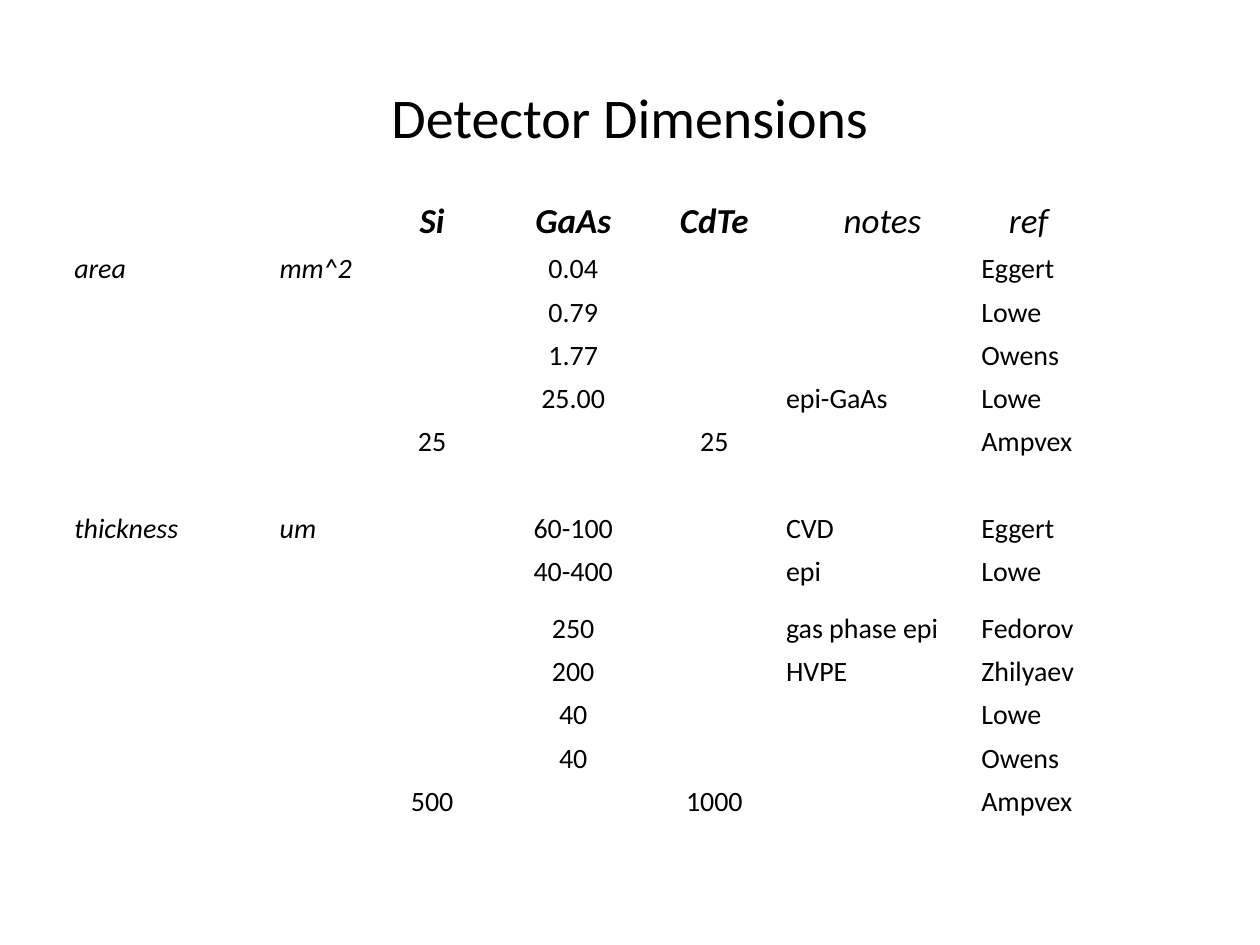
from pptx import Presentation
from pptx.dml.color import RGBColor
from pptx.enum.text import MSO_ANCHOR as Anchor, PP_ALIGN as Align
from pptx.util import Inches, Pt

COLORS = {"text": "000000", "background": "FFFFFF"}
COLUMN_WIDTHS = [1.63, 0.66, 1.12, 1.12, 1.12, 1.55, 0.77, 0.77]
TABLE_HEIGHT, HEADER_HEIGHT, TALL_HEIGHT = 5, 0.43, 0.45
TALL_ROW = 9
LABEL_COLUMNS = (0, 1)
MATERIAL_COLUMNS = (2, 3, 4)

# quantity, unit, Si, GaAs, CdTe, notes, ref
ROWS = [
    ("", "", "Si", "GaAs", "CdTe", "notes", "ref"),
    ("area", "mm^2", "", "0.04", "", "", "Eggert"),
    ("", "", "", "0.79", "", "", "Lowe"),
    ("", "", "", "1.77", "", "", "Owens"),
    ("", "", "", "25.00", "", "epi-GaAs", "Lowe"),
    ("", "", "25", "", "25", "", "Ampvex"),
    ("",) * 7,
    ("thickness", "um", "", "60-100", "", "CVD", "Eggert"),
    ("", "", "", "40-400", "", "epi", "Lowe"),
    ("", "", "", "250", "", "gas phase epi", "Fedorov"),
    ("", "", "", "200", "", "HVPE", "Zhilyaev"),
    ("", "", "", "40", "", "", "Lowe"),
    ("", "", "", "40", "", "", "Owens"),
    ("", "", "500", "", "1000", "", "Ampvex"),
]


def row_heights():
    """Give the header and the tall row their heights; the rest share what is left."""
    plain = (TABLE_HEIGHT - HEADER_HEIGHT - TALL_HEIGHT) / (len(ROWS) - 2)
    special = {0: HEADER_HEIGHT, TALL_ROW: TALL_HEIGHT}
    return [special.get(index, plain) for index in range(len(ROWS))]


class SlideBuilder:
    font = "Calibri"

    def __init__(self, page):
        self.page = page
        page.background.fill.solid()
        page.background.fill.fore_color.rgb = RGBColor.from_string(COLORS["background"])

    def add_text(self, para, text, size, align, bold=False, italic=False):
        para.alignment = align
        span = para.add_run()
        span.text = text
        span.font.name = self.font
        span.font.size = Pt(size)
        span.font.bold = bold
        span.font.italic = italic
        span.font.color.rgb = RGBColor.from_string(COLORS["text"])

    def title(self, text, left, top, width, height):
        box = self.page.shapes.title
        box.left, box.top = Inches(left), Inches(top)
        box.width, box.height = Inches(width), Inches(height)
        box.text_frame.vertical_anchor = Anchor.MIDDLE
        self.add_text(box.text_frame.paragraphs[0], text, 32, Align.CENTER)

    def table(self, left, top):
        frame = self.page.shapes.add_table(
            len(ROWS), len(COLUMN_WIDTHS), Inches(left), Inches(top),
            Inches(sum(COLUMN_WIDTHS)), Inches(TABLE_HEIGHT))
        table = frame.table
        table.first_row = table.horz_banding = False
        for column, width in zip(table.columns, COLUMN_WIDTHS):
            column.width = Inches(width)
        for row, height in zip(table.rows, row_heights()):
            row.height = Inches(height)
        for cell in table.iter_cells():
            cell.fill.background()
            cell.vertical_anchor = Anchor.BOTTOM
            cell.margin_left = cell.margin_right = cell.margin_top = Inches(0.01)
            cell.margin_bottom = 0
        for r, values in enumerate(ROWS):
            for c, text in enumerate(values):
                if text:
                    self.fill_cell(table.cell(r, c), text, r == 0, c)

    def fill_cell(self, cell, text, header, column):
        material = column in MATERIAL_COLUMNS
        self.add_text(cell.text_frame.paragraphs[0], text,
                      size=20 if header else 16,
                      align=Align.CENTER if header or material else Align.LEFT,
                      bold=header and material,
                      italic=header or column in LABEL_COLUMNS)


def main():
    deck = Presentation()
    deck.slide_width, deck.slide_height = Inches(10), Inches(7.5)
    title_only = deck.slide_layouts[5]
    slide = SlideBuilder(deck.slides.add_slide(title_only))
    slide.title("Detector Dimensions", 0.5, 0.3, 9, 1.25)
    slide.table(0.58, 1.5)
    deck.save("out.pptx")


if __name__ == "__main__":
    main()
